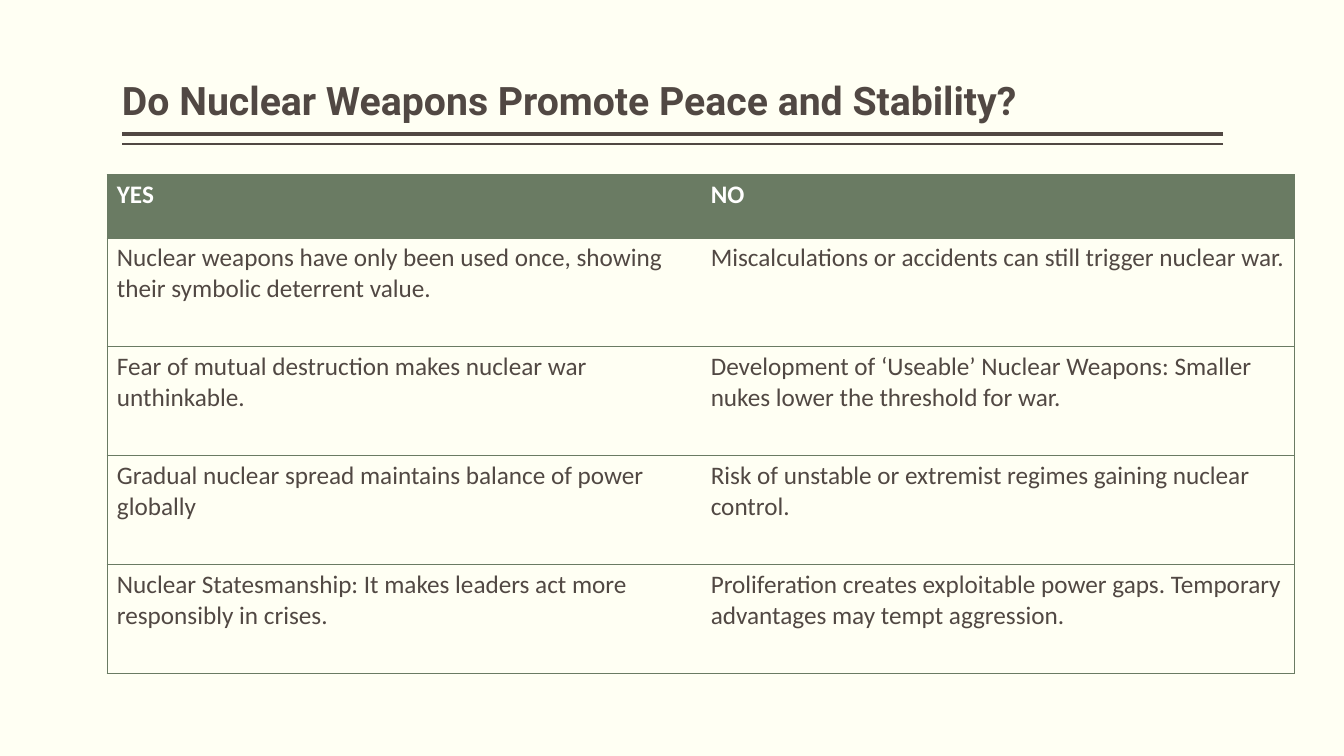
import pptx
import pptx.util
import pptx.dml.color
import pptx.enum.shapes
import pptx.enum.text
import pptx.oxml
import pptx.oxml.ns

# Content
TITLE = "Do Nuclear Weapons Promote Peace and Stability?"
ROWS = [
    ("YES", "NO"),
    ("Nuclear weapons have only been used once, showing their symbolic deterrent value.",
     "Miscalculations or accidents can still trigger nuclear war."),
    ("Fear of mutual destruction makes nuclear war unthinkable.",
     "Development of ‘Useable’ Nuclear Weapons: Smaller nukes lower the threshold for war."),
    ("Gradual nuclear spread maintains balance of power globally",
     "Risk of unstable or extremist regimes gaining nuclear control."),
    ("Nuclear Statesmanship: It makes leaders act more responsibly in crises.",
     "Proliferation creates exploitable power gaps. Temporary advantages may tempt aggression."),
]
PAPER, INK, GREEN, WHITE = "FFFFF3", "514843", "6A7B63", "FFFFFF"

# Layout in inches
WIDE, HIGH = 13.33, 7.5
LEFT, SPAN = 1.21, 10.92
RULES = [(1.33, 3), (1.43, 1)]
GRID_X, GRID_Y, COL = 1.06, 1.73, 5.89
HEAD, ROW = 0.63, 1.08

inch, pt = pptx.util.Inches, pptx.util.Pt


def color(code):
    return pptx.dml.color.RGBColor.from_string(code)


def write(frame, text, size=18, font="Calibri", ink=INK, bold=False, space=None):
    par = frame.paragraphs[0]
    par.line_spacing = space
    run = par.add_run()
    run.text = text
    run.font.size, run.font.name, run.font.bold = pt(size), font, bold
    run.font.color.rgb = color(ink)


def border(cell, side, shown):
    fill = f'<a:solidFill><a:srgbClr val="{GREEN}"/></a:solidFill>' if shown else "<a:noFill/>"
    space = pptx.oxml.ns.nsdecls("a")
    xml = f'<a:ln{side} {space} w="{pt(0.5)}">{fill}</a:ln{side}>'
    cell._tc.get_or_add_tcPr().append(pptx.oxml.parse_xml(xml))


def add_title(slide):
    title = slide.shapes.title
    title.left, title.top = inch(LEFT), inch(0.08)
    title.width, title.height = inch(SPAN), inch(1.2)
    frame = title.text_frame
    frame.word_wrap = True
    frame.auto_size = pptx.enum.text.MSO_AUTO_SIZE.NONE
    frame.vertical_anchor = pptx.enum.text.MSO_ANCHOR.BOTTOM
    frame.margin_left = frame.margin_right = 0
    frame.margin_top = frame.margin_bottom = inch(0.05)
    write(frame, TITLE, size=28, font="Roboto", bold=True, space=0.9)
    frame.paragraphs[0].alignment = pptx.enum.text.PP_ALIGN.LEFT


def add_rules(slide):
    for y, weight in RULES:
        rule = slide.shapes.add_connector(
            pptx.enum.shapes.MSO_CONNECTOR.STRAIGHT,
            inch(LEFT + SPAN), inch(y), inch(LEFT), inch(y))
        rule.line.color.rgb = color(INK)
        rule.line.width = pt(weight)
        props = rule._element.spPr
        props.append(props.makeelement(pptx.oxml.ns.qn("a:effectLst"), {}))


def add_grid(slide):
    count, cols = len(ROWS), len(ROWS[0])
    heights = [HEAD] + [ROW] * (count - 1)
    table = slide.shapes.add_table(
        count, cols, inch(GRID_X), inch(GRID_Y),
        inch(COL * cols), inch(sum(heights))).table
    table.horz_banding = table.first_row = False
    for col in table.columns:
        col.width = inch(COL)
    for r, texts in enumerate(ROWS):
        table.rows[r].height = inch(heights[r])
        for c, text in enumerate(texts):
            cell = table.cell(r, c)
            # Only the outer sides and the row lines show
            sides = {"L": c == 0, "R": c == cols - 1, "T": True, "B": True}
            for side, shown in sides.items():
                border(cell, side, shown)
            if r == 0:
                cell.fill.solid()
                cell.fill.fore_color.rgb = color(GREEN)
            else:
                cell.fill.background()
            write(cell.text_frame, text, ink=INK if r else WHITE, bold=r == 0)


def main():
    deck = pptx.Presentation()
    deck.slide_width, deck.slide_height = inch(WIDE), inch(HIGH)
    slide = deck.slides.add_slide(deck.slide_layouts.get_by_name("Title Only"))
    slide.background.fill.solid()
    slide.background.fill.fore_color.rgb = color(PAPER)
    add_rules(slide)
    add_title(slide)
    add_grid(slide)
    deck.save("out.pptx")


if __name__ == "__main__":
    main()
